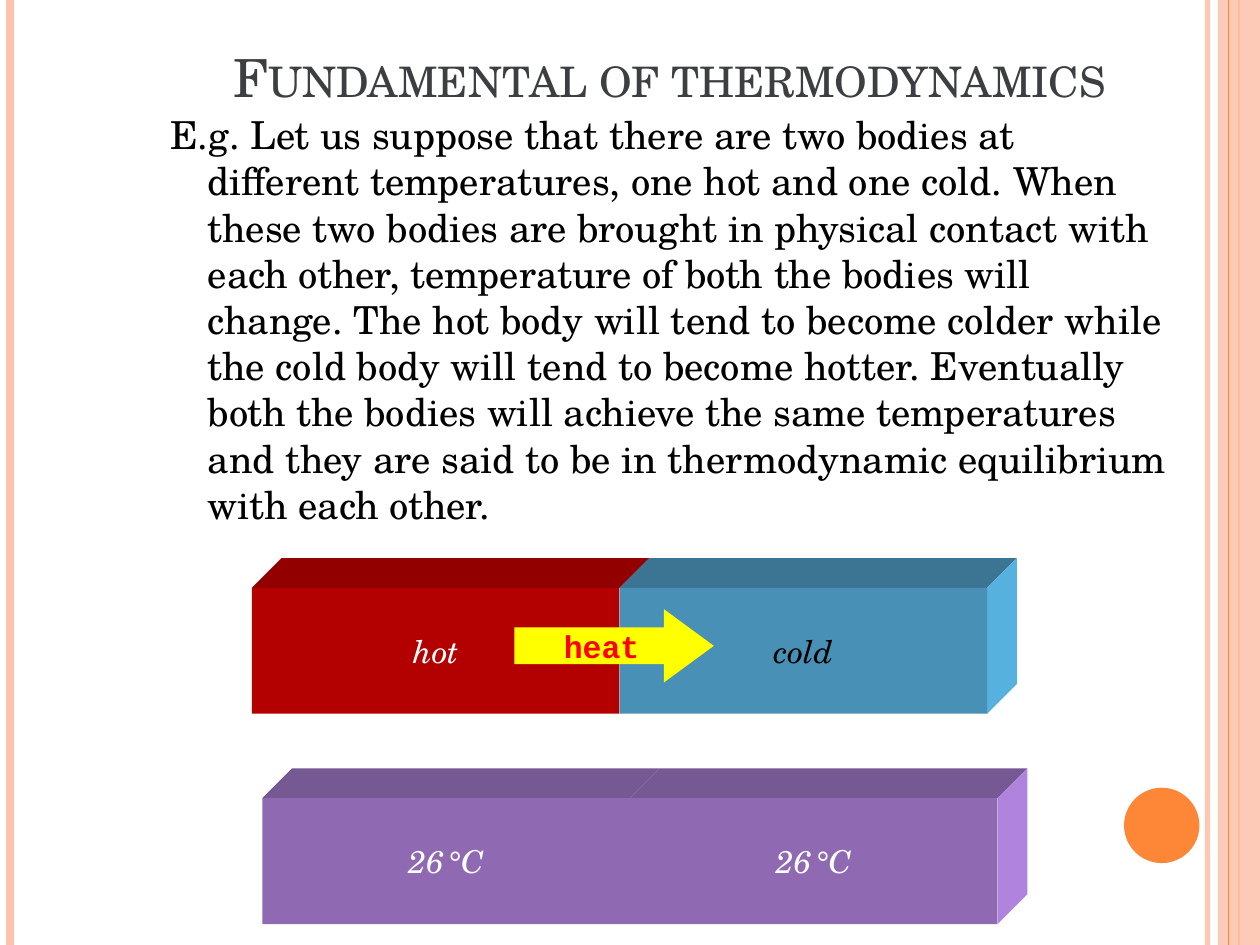
from lxml import etree
from pptx import Presentation
from pptx.dml.color import RGBColor
from pptx.enum.shapes import MSO_CONNECTOR, MSO_SHAPE
from pptx.enum.text import MSO_ANCHOR, MSO_AUTO_SIZE, PP_ALIGN
from pptx.oxml.ns import qn
from pptx.util import Cm, Pt

RECT, OVAL, ARROW = MSO_SHAPE.RECTANGLE, MSO_SHAPE.OVAL, MSO_SHAPE.RIGHT_ARROW
LINE = MSO_CONNECTOR.STRAIGHT
MIDDLE, BOTTOM = MSO_ANCHOR.MIDDLE, MSO_ANCHOR.BOTTOM
LEFT, CENTER = PP_ALIGN.LEFT, PP_ALIGN.CENTER
FIXED = MSO_AUTO_SIZE.NONE
SERIF, MONO = "TeX Gyre Schola", "Courier New"
ORANGE, PEACH = "FE8637", "FEC3AE"
WIDE, TALL = 25.4, 19.05
BODY = (
    "E.g. Let us suppose that there are two bodies at different temperatures, "
    "one hot and one cold. When these two bodies are brought in physical contact "
    "with each other, temperature of both the bodies will change. The hot body "
    "will tend to become colder while the cold body will tend to become hotter. "
    "Eventually both the bodies will achieve the same temperatures and they are "
    "said to be in thermodynamic equilibrium with each other."
)


def color(code):
    return RGBColor.from_string(code)


def fade(fill, alpha):
    tint = fill._xPr.find(".//" + qn("a:srgbClr"))
    etree.SubElement(tint, qn("a:alpha"), val=str(alpha * 1000))


class Deck:
    """Draws styled elements on the current slide, with lengths in centimetres."""

    def __init__(self):
        self.prs = Presentation()
        self.prs.slide_width, self.prs.slide_height = Cm(WIDE), Cm(TALL)
        self.slide = self.prs.slides.add_slide(self.prs.slide_layouts[5])
        self.shapes = self.slide.shapes

    def run(self, para, text, size, ink, font=SERIF, bold=False, italic=False):
        run = para.add_run()
        run.text = text
        face = run.font
        face.name, face.size = font, Pt(size)
        face.bold, face.italic = bold, italic
        face.color.rgb = color(ink)
        return run

    def title(self, text, x, y, w, h):
        box = self.shapes.title
        box.left, box.top, box.width, box.height = Cm(x), Cm(y), Cm(w), Cm(h)
        frame = box.text_frame
        frame.auto_size, frame.vertical_anchor = FIXED, BOTTOM
        para = frame.paragraphs[0]
        para.alignment = LEFT
        run = self.run(para, text, 30, "3C3E42")
        run.font._element.set("cap", "small")

    def text(self, text, x, y, w, h, hang):
        box = self.shapes.add_textbox(Cm(x), Cm(y), Cm(w), Cm(h))
        frame = box.text_frame
        frame.word_wrap = True
        para = frame.paragraphs[0]
        para.space_before = Pt(6)
        props = para._p.get_or_add_pPr()
        props.set("marL", str(Cm(hang)))
        props.set("indent", str(-Cm(hang)))
        self.run(para, text, 22, "000000")

    def rule(self, x, ink, width, alpha=100):
        line = self.shapes.add_connector(LINE, Cm(x), 0, Cm(x), Cm(TALL))
        line.line.width = Pt(width)
        line.line.color.rgb = color(ink)
        etree.SubElement(line._element.spPr, qn("a:effectLst"))
        if alpha < 100:
            fade(line.line.fill, alpha)

    def paint(self, shape, fill):
        shape.shadow.inherit = False
        shape.fill.solid()
        shape.fill.fore_color.rgb = color(fill)
        shape.line.fill.background()

    def shape(self, kind, x, y, w, h, fill, alpha=100):
        shape = self.shapes.add_shape(kind, Cm(x), Cm(y), Cm(w), Cm(h))
        self.paint(shape, fill)
        if alpha < 100:
            fade(shape.fill, alpha)
        return shape

    def label(self, shape, parts, ink, **style):
        frame = shape.text_frame
        frame.word_wrap, frame.vertical_anchor = False, MIDDLE
        para = frame.paragraphs[0]
        para.alignment = CENTER
        for text, size in parts:
            self.run(para, text, size, ink, **style)

    def face(self, points, fill):
        start, *rest = [(Cm(x), Cm(y)) for x, y in points]
        path = self.shapes.build_freeform(*start)
        path.add_line_segments(rest)
        self.paint(path.convert_to_shape(), fill)

    def block(self, x, y, w, h, front, top, parts, ink, side=None):
        deep = 0.6
        end, back = x + w, y - deep
        self.face([(x, y), (x + deep, back), (end + deep, back), (end, y)], top)
        if side:
            edge = [(end, y), (end + deep, back), (end + deep, back + h), (end, y + h)]
            self.face(edge, side)
        self.label(self.shape(RECT, x, y, w, h, front), parts, ink, italic=True)


def main():
    deck = Deck()
    deck.rule(24.34, PEACH, 3, 93)
    deck.rule(0.21, PEACH, 4.5)
    deck.rule(24.98, ORANGE, 1.5)
    deck.shape(RECT, 24.55, 0, 0.85, TALL, PEACH, 87)
    deck.rule(24.77, ORANGE, 0.75)
    deck.shape(OVAL, 22.66, 15.88, 1.52, 1.52, ORANGE)

    deck.text(BODY, 3.18, 2.12, 20.75, 13.55, 0.76)
    deck.title("Fundamental of thermodynamics", 4.45, 0.42, 19.05, 1.89)

    wide, tall = 7.41, 2.54
    x, y = 5.08, 11.85
    deck.block(x, y, wide, tall, "B30000", "930000", [("hot", 18)], "FFFFFF")
    deck.block(x + wide, y, wide, tall, "4890B5", "3C7594", [("cold", 18)],
               "000000", "57B1DE")
    arrow = deck.shape(ARROW, 10.37, 12.28, 4.02, 1.48, "FFFF00")
    arrow.adjustments[0], arrow.adjustments[1] = 0.5, 0.68
    deck.label(arrow, [("heat", 18)], "FF0000", font=MONO, bold=True)

    warm = [("26", 18), (" ", 10), ("°C", 18)]
    x, y = 5.29, 16.09
    for step, side in enumerate((None, "B083DE")):
        deck.block(x + step * wide, y, wide, tall, "9069B3", "765893", warm,
                   "FFFFFF", side)
    deck.prs.save("out.pptx")


if __name__ == "__main__":
    main()
